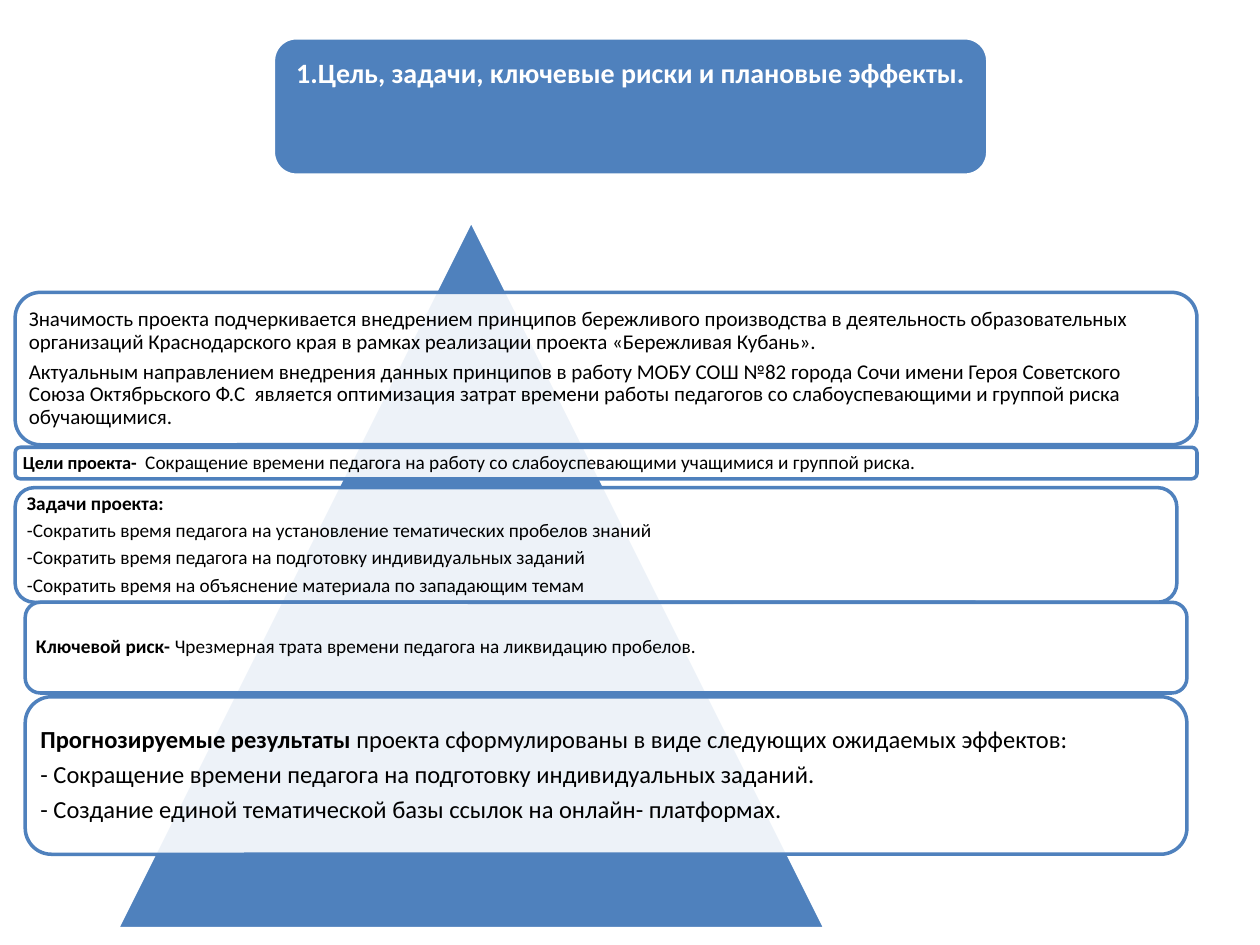
from lxml import etree
from pptx import Presentation
from pptx.dml.color import RGBColor
from pptx.enum.shapes import MSO_SHAPE
from pptx.enum.text import MSO_ANCHOR, PP_ALIGN
from pptx.oxml.ns import qn
from pptx.util import Inches, Pt

ROUNDED, TRIANGLE = MSO_SHAPE.ROUNDED_RECTANGLE, MSO_SHAPE.ISOSCELES_TRIANGLE
TOP, MIDDLE = MSO_ANCHOR.TOP, MSO_ANCHOR.MIDDLE
LEFT, CENTER = PP_ALIGN.LEFT, PP_ALIGN.CENTER
BLUE = RGBColor(0x4F, 0x81, 0xBD)
WHITE = RGBColor(0xFF, 0xFF, 0xFF)
BLACK = RGBColor(0, 0, 0)
FONT = "Calibri"
PANEL_OPACITY = 90
SPACE_AFTER = 0.35  # share of the text size

TITLE = "1.Цель, задачи, ключевые риски и плановые эффекты."
TITLE_BOX = (2.17, 0.3, 5.67, 1.09)
PYRAMID_BOX = (0.93, 1.75, 5.62, 5.62)

# Each panel: box, inset, paragraphs; each paragraph: runs of (text, size, bold)
PANELS = [
    ((0.12, 2.32, 9.38, 1.21), 0.05, [
        [("Значимость проекта подчеркивается внедрением принципов бережливого "
          "производства в деятельность образовательных организаций Краснодарского "
          "края в рамках реализации проекта «Бережливая Кубань».", 12, False)],
        [("Актуальным направлением внедрения данных принципов в работу МОБУ СОШ №82 "
          "города Сочи имени Героя Советского Союза Октябрьского Ф.С  является "
          "оптимизация затрат времени работы педагогов со слабоуспевающими и группой "
          "риска обучающимися.", 12, False)],
    ]),
    ((0.12, 3.55, 9.38, 0.25), 0.05, [
        [("Цели проекта-  ", 10.5, True),
         ("Сокращение времени педагога на работу со слабоуспевающими учащимися "
          "и группой риска.", 11, False)],
    ]),
    ((0.12, 3.87, 9.22, 0.91), 0.05, [
        [("Задачи проекта:", 11, True)],
        [("-Сократить время педагога на установление тематических пробелов знаний", 11, False)],
        [("-Сократить время педагога на подготовку индивидуальных заданий", 11, False)],
        [("-Сократить время на объяснение материала по западающим темам", 11, False)],
    ]),
    ((0.2, 4.78, 9.22, 0.72), 0.05, [
        [("Ключевой риск- ", 11, True),
         ("Чрезмерная трата времени педагога на ликвидацию пробелов.", 11, False)],
    ]),
    ((0.2, 5.53, 9.22, 1.25), 0.06, [
        [("Прогнозируемые результаты ", 14, True),
         ("проекта сформулированы в виде следующих ожидаемых эффектов:", 14, False)],
        [("- Сокращение времени педагога на подготовку индивидуальных заданий.", 14, False)],
        [("- Создание единой тематической базы ссылок на онлайн- платформах.", 14, False)],
    ]),
]


def add_block(slide, kind, box, fill, line):
    sp = slide.shapes.add_shape(kind, *map(Inches, box))
    sp.shadow.inherit = False
    sp.fill.solid()
    sp.fill.fore_color.rgb = fill
    sp.line.color.rgb = line
    sp.line.width = Pt(2)
    return sp


def set_opacity(sp, percent):
    color = sp.fill._xPr.find(qn("a:solidFill"))[0]
    etree.SubElement(color, qn("a:alpha")).set("val", str(percent * 1000))


def write(sp, paragraphs, color, insets, anchor=MIDDLE, align=LEFT):
    """Fill the shape with text; insets are left, top, right, bottom."""
    tf = sp.text_frame
    tf.word_wrap = True
    tf.vertical_anchor = anchor
    for side, inset in zip(("left", "top", "right", "bottom"), insets):
        setattr(tf, f"margin_{side}", Inches(inset))
    for i, runs in enumerate(paragraphs):
        p = tf.add_paragraph() if i else tf.paragraphs[0]
        p.alignment = align
        p.line_spacing = 0.9
        p.space_after = Pt(runs[0][1] * SPACE_AFTER)
        for text, size, bold in runs:
            r = p.add_run()
            r.text = text
            r.font.color.rgb = color
            for name, value in {"name": FONT, "size": Pt(size), "bold": bold}.items():
                setattr(r.font, name, value)


def main():
    prs = Presentation()
    prs.slide_width, prs.slide_height = Inches(10), Inches(7.5)
    slide = prs.slides.add_slide(prs.slide_layouts[6])

    title = add_block(slide, ROUNDED, TITLE_BOX, BLUE, WHITE)
    write(title, [[(TITLE, 16, True)]], WHITE, (0.07, 0.12, 0.07, 0.03), TOP, CENTER)

    add_block(slide, TRIANGLE, PYRAMID_BOX, BLUE, WHITE)
    for box, inset, paragraphs in PANELS:
        panel = add_block(slide, ROUNDED, box, WHITE, BLUE)
        set_opacity(panel, PANEL_OPACITY)
        write(panel, paragraphs, BLACK, [inset] * 4)

    prs.save("out.pptx")


if __name__ == "__main__":
    main()
